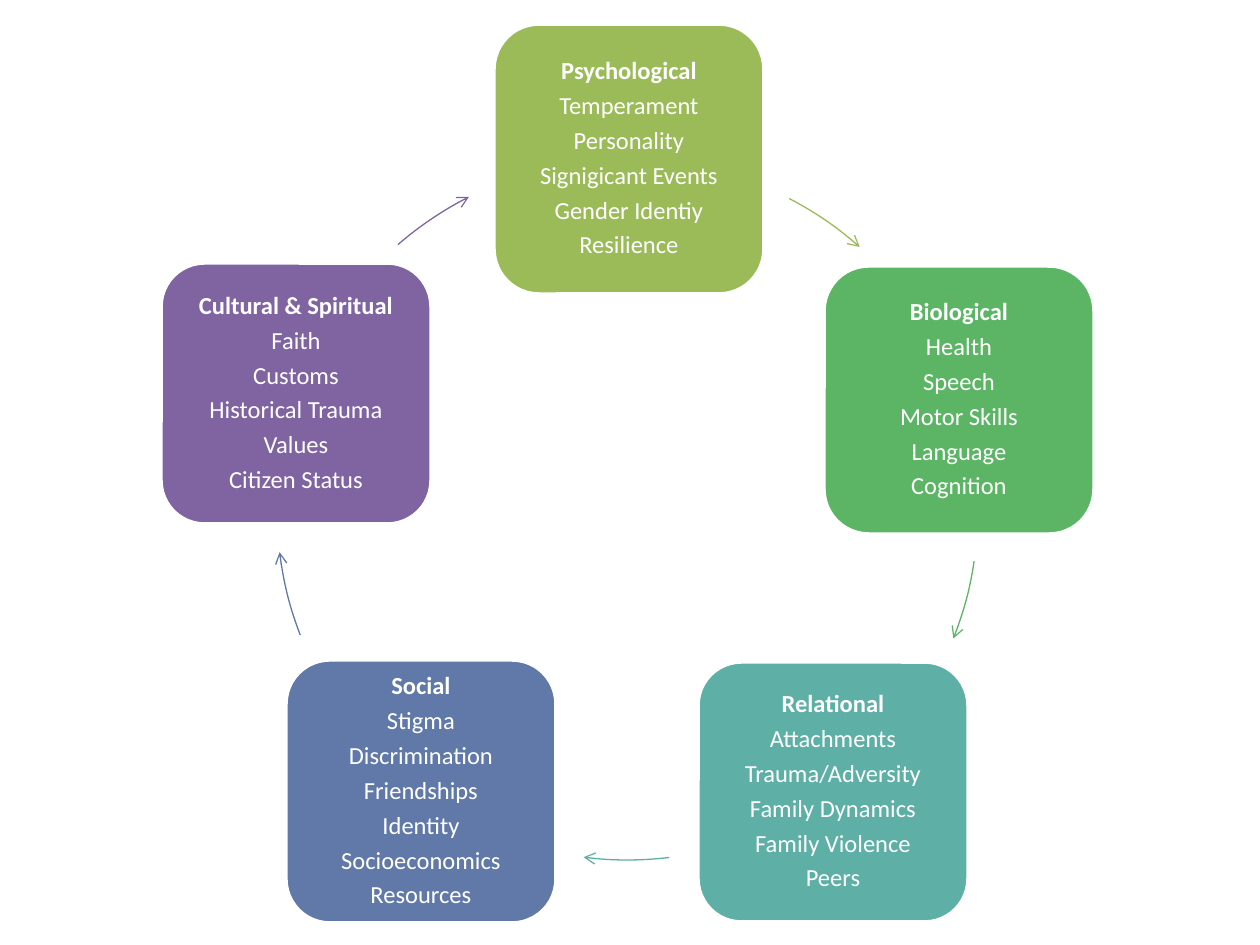
"""Build a slide with a cycle of five factor groups joined by curved arrows."""
from dataclasses import dataclass

from lxml import etree
from pptx import Presentation
from pptx.dml.color import RGBColor
from pptx.enum.shapes import MSO_SHAPE
from pptx.enum.text import MSO_ANCHOR, PP_ALIGN
from pptx.oxml.ns import qn
from pptx.shapes.autoshape import Shape
from pptx.slide import Slide
from pptx.util import Emu, Inches, Pt

ROUNDED, ARC = MSO_SHAPE.ROUNDED_RECTANGLE, MSO_SHAPE.ARC
MIDDLE, CENTER = MSO_ANCHOR.MIDDLE, PP_ALIGN.CENTER
EMU_PER_PX = Inches(1) / 126
ARC_UNITS_PER_DEGREE = 0.6
RING_LEFT, RING_TOP, RING_SIZE = 277, 159, 701
BOX_WIDTH = 270


@dataclass(frozen=True)
class Theme:
    font: str = "Calibri"
    size: float = 14
    white: str = "FFFFFF"
    green: str = "9BBB59"
    emerald: str = "5CB565"
    teal: str = "5EAFA6"
    blue: str = "6179A8"
    purple: str = "8064A2"
    box_line: float = 2
    arrow_line: float = 0.75


@dataclass(frozen=True)
class Group:
    heading: str
    items: tuple[str, ...]
    color: str
    left: int
    top: int
    height: int
    arrow_start: float
    arrow_end: float


THEME = Theme()
GROUPS = (
    Group("Psychological",
          ("Temperament", "Personality", "Signigicant Events",
           "Gender Identiy", "Resilience"),
          THEME.green, 494, 24, 270, 297.5, 311.5),
    Group("Biological",
          ("Health", "Speech", "Motor Skills", "Language", "Cognition"),
          THEME.emerald, 824, 266, 268, 8.5, 21.6),
    Group("Relational",
          ("Attachments", "Trauma/Adversity", "Family Dynamics",
           "Family Violence", "Peers"),
          THEME.teal, 698, 662, 260, 83.2, 97.2),
    Group("Social",
          ("Stigma", "Discrimination", "Friendships", "Identity",
           "Socioeconomics", "Resources"),
          THEME.blue, 286, 660, 263, 159, 173),
    Group("Cultural & Spiritual",
          ("Faith", "Customs", "Historical Trauma", "Values",
           "Citizen Status"),
          THEME.purple, 161, 263, 261, 229.1, 243.1),
)


def px(n: int) -> Emu:
    return Emu(round(n * EMU_PER_PX))


def set_all(target: object, values: dict) -> None:
    for name, value in values.items():
        setattr(target, name, value)


def add_outlined(s: Slide, kind: MSO_SHAPE, bounds: tuple[int, ...],
                 color: str, width: float) -> Shape:
    sp = s.shapes.add_shape(kind, *map(px, bounds))
    sp.shadow.inherit = False
    sp.line.color.rgb = RGBColor.from_string(color)
    sp.line.width = Pt(width)
    return sp


def add_box(s: Slide, group: Group) -> None:
    bounds = (group.left, group.top, BOX_WIDTH, group.height)
    sp = add_outlined(s, ROUNDED, bounds, THEME.white, THEME.box_line)
    sp.fill.solid()
    sp.fill.fore_color.rgb = RGBColor.from_string(group.color)
    tf = sp.text_frame
    margins = ("margin_left", "margin_top", "margin_right", "margin_bottom")
    set_all(tf, {"word_wrap": True, "vertical_anchor": MIDDLE,
                 **dict.fromkeys(margins, px(7))})
    for i, text in enumerate((group.heading, *group.items)):
        p = tf.add_paragraph() if i else tf.paragraphs[0]
        set_all(p, {"alignment": CENTER, "line_spacing": 0.9,
                    "space_after": Pt(4.75)})
        r = p.add_run()
        r.text = text
        set_all(r.font, {"name": THEME.font, "size": Pt(THEME.size),
                         "bold": i == 0})
        r.font.color.rgb = RGBColor.from_string(THEME.white)


def add_arrow(s: Slide, group: Group) -> None:
    bounds = (RING_LEFT, RING_TOP, RING_SIZE, RING_SIZE)
    sp = add_outlined(s, ARC, bounds, group.color, THEME.arrow_line)
    sp.fill.background()
    for i, angle in enumerate((group.arrow_start, group.arrow_end)):
        sp.adjustments[i] = angle * ARC_UNITS_PER_DEGREE
    ln = sp.line.fill._xPr
    etree.SubElement(ln, qn("a:tailEnd"), type="arrow")


def main() -> None:
    prs = Presentation()
    set_all(prs, {"slide_width": Inches(10), "slide_height": Inches(7.5)})
    s = prs.slides.add_slide(prs.slide_layouts[6])
    for group in GROUPS:
        add_box(s, group)
        add_arrow(s, group)
    prs.save("out.pptx")


if __name__ == "__main__":
    main()
